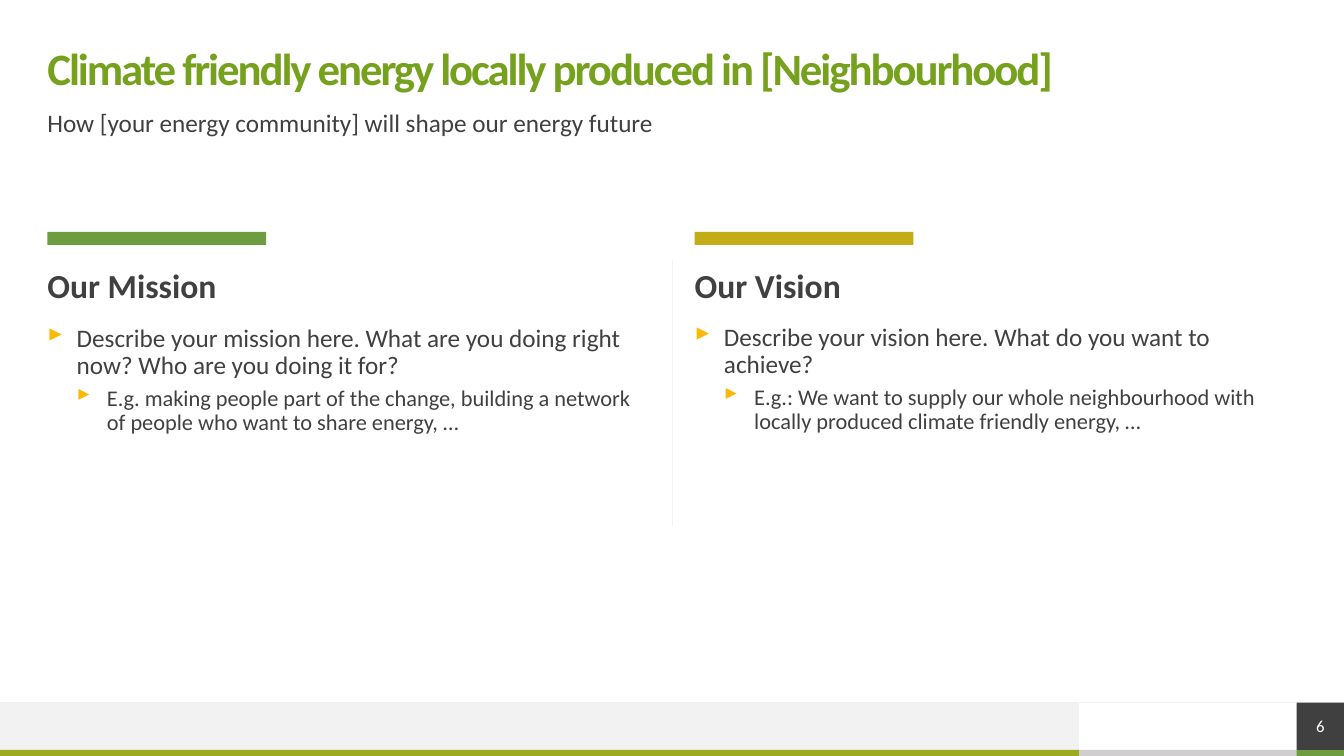
from dataclasses import dataclass

import lxml.etree
import pptx
import pptx.dml.color
import pptx.enum.shapes
import pptx.enum.text
import pptx.oxml.ns
import pptx.shapes.autoshape
import pptx.slide
import pptx.text.text
import pptx.util

Inches = pptx.util.Inches
Pt = pptx.util.Pt
ALIGN = pptx.enum.text.PP_ALIGN
ANCHOR = pptx.enum.text.MSO_ANCHOR
qn = pptx.oxml.ns.qn

FONT = "Calibri"
COLORS = {
    "title": "75A11D", "text": "404040", "bullet": "FBB804",
    "green": "6D9D40", "gold": "C3AD16", "olive": "9CAA20",
    "pale": "F2F2F2", "gray": "D0CECE", "white": "FFFFFF",
}
WIDE, HIGH = 13.33, 7.5
LEFT, SPAN = 0.47, 12.4


@dataclass
class Bar:
    left: float
    top: float
    width: float
    height: float
    color: str


@dataclass
class Column:
    left: float
    top: float
    color: str
    head: str
    point: str
    detail: str


@dataclass
class Level:
    indent: float
    hang: float
    size: int
    before: int


BARS = [
    Bar(10.7, 7.44, 2.17, 0.06, "gray"),
    Bar(0, 6.97, 10.7, 0.47, "pale"),
    Bar(0, 7.44, 10.7, 0.06, "olive"),
    Bar(12.86, 7.44, 0.47, 0.06, "green"),
]
COLUMNS = [
    Column(LEFT, 3.23, "green", "Our Mission",
           "Describe your mission here. What are you doing right now? "
           "Who are you doing it for?",
           "E.g. making people part of the change, building a network "
           "of people who want to share energy, …"),
    Column(6.89, 3.22, "gold", "Our Vision",
           "Describe your vision here. What do you want to achieve?",
           "E.g.: We want to supply our whole neighbourhood with "
           "locally produced climate friendly energy, …"),
]
LEVELS = [Level(0.29, 0.29, 18, 0), Level(0.59, 0.3, 16, 5)]


def get_rgb(color: str) -> pptx.dml.color.RGBColor:
    return pptx.dml.color.RGBColor.from_string(COLORS[color])


def style(para: pptx.text.text._Paragraph, size: int, color: str = "text",
          bold: bool = False) -> None:
    para.line_spacing = 0.9
    for run in para.runs:
        run.font.name = FONT
        run.font.size = Pt(size)
        run.font.bold = bold
        run.font.color.rgb = get_rgb(color)


def set_frame(frame: pptx.text.text.TextFrame, anchor: ANCHOR) -> None:
    frame.word_wrap = True
    frame.auto_size = pptx.enum.text.MSO_AUTO_SIZE.NONE
    frame.vertical_anchor = anchor
    frame.margin_left = frame.margin_right = 0
    frame.margin_top = frame.margin_bottom = 0


def add_bar(slide: pptx.slide.Slide, bar: Bar) -> pptx.shapes.autoshape.Shape:
    shape = slide.shapes.add_shape(
        pptx.enum.shapes.MSO_SHAPE.RECTANGLE, Inches(bar.left),
        Inches(bar.top), Inches(bar.width), Inches(bar.height))
    shape.shadow.inherit = False
    shape.fill.solid()
    shape.fill.fore_color.rgb = get_rgb(bar.color)
    shape.line.fill.background()
    return shape


def add_line(slide: pptx.slide.Slide, left: float, top: float,
             right: float, bottom: float) -> None:
    line = slide.shapes.add_connector(
        pptx.enum.shapes.MSO_CONNECTOR.STRAIGHT,
        Inches(left), Inches(top), Inches(right), Inches(bottom))
    line.line.color.rgb = get_rgb("pale")
    line.line.width = Pt(0.5)
    lxml.etree.SubElement(line._element.spPr, qn("a:effectLst"))


def add_text(slide: pptx.slide.Slide, left: float, top: float, width: float,
             height: float, text: str) -> pptx.text.text.TextFrame:
    box = slide.shapes.add_textbox(
        Inches(left), Inches(top), Inches(width), Inches(height))
    set_frame(box.text_frame, ANCHOR.TOP)
    box.text_frame.text = text
    return box.text_frame


def set_bullet(para: pptx.text.text._Paragraph, level: Level) -> None:
    props = para._p.get_or_add_pPr()
    props.set("marL", str(Inches(level.indent)))
    props.set("indent", str(-Inches(level.hang)))
    tint = lxml.etree.SubElement(props, qn("a:buClr"))
    lxml.etree.SubElement(tint, qn("a:srgbClr"), val=COLORS["bullet"])
    lxml.etree.SubElement(props, qn("a:buChar"), char="▸")


def add_column(slide: pptx.slide.Slide, col: Column) -> None:
    add_bar(slide, Bar(col.left, 2.3, 2.17, 0.13, col.color))
    head = add_text(slide, col.left, 2.67, 5.98, 0.39, col.head)
    style(head.paragraphs[0], 24, bold=True)
    body = add_text(slide, col.left, col.top, 5.98, 2.4, col.point)
    body.add_paragraph().text = col.detail
    for rank, (para, level) in enumerate(zip(body.paragraphs, LEVELS)):
        para.level = rank
        set_bullet(para, level)
        style(para, level.size)
        if level.before:
            para.space_before = Pt(level.before)


def add_title(slide: pptx.slide.Slide, text: str) -> None:
    title = slide.shapes.title
    title.left, title.top = Inches(LEFT), Inches(0.47)
    title.width, title.height = Inches(SPAN), Inches(0.47)
    set_frame(title.text_frame, ANCHOR.MIDDLE)
    title.text_frame.text = text
    para = title.text_frame.paragraphs[0]
    para.alignment = ALIGN.LEFT
    style(para, 32, "title", bold=True)
    para.runs[0].font._element.set("spc", "-150")


def main() -> None:
    deck = pptx.Presentation()
    deck.slide_width, deck.slide_height = Inches(WIDE), Inches(HIGH)
    slide = deck.slides.add_slide(deck.slide_layouts[5])

    # Footer bands
    for bar in BARS:
        add_bar(slide, bar)
    add_line(slide, WIDE, 6.97, 0, 6.97)

    # Title and subtitle
    add_title(slide,
              "Climate friendly energy locally produced in [Neighbourhood]")
    lead = add_text(slide, LEFT, 1.1, SPAN, 0.39,
                    "How [your energy community] will shape our energy future")
    style(lead.paragraphs[0], 18)

    # Mission and vision, with a divider
    for col in COLUMNS:
        add_column(slide, col)
    add_line(slide, 6.67, 2.58, 6.67, 5.22)

    # Page number
    page = add_bar(slide, Bar(12.86, 6.97, 0.47, 0.47, "text"))
    set_frame(page.text_frame, ANCHOR.MIDDLE)
    page.text_frame.text = "6"
    para = page.text_frame.paragraphs[0]
    para.alignment = ALIGN.CENTER
    style(para, 12, "white")
    para.line_spacing = 1.0

    deck.save("out.pptx")


if __name__ == "__main__":
    main()
